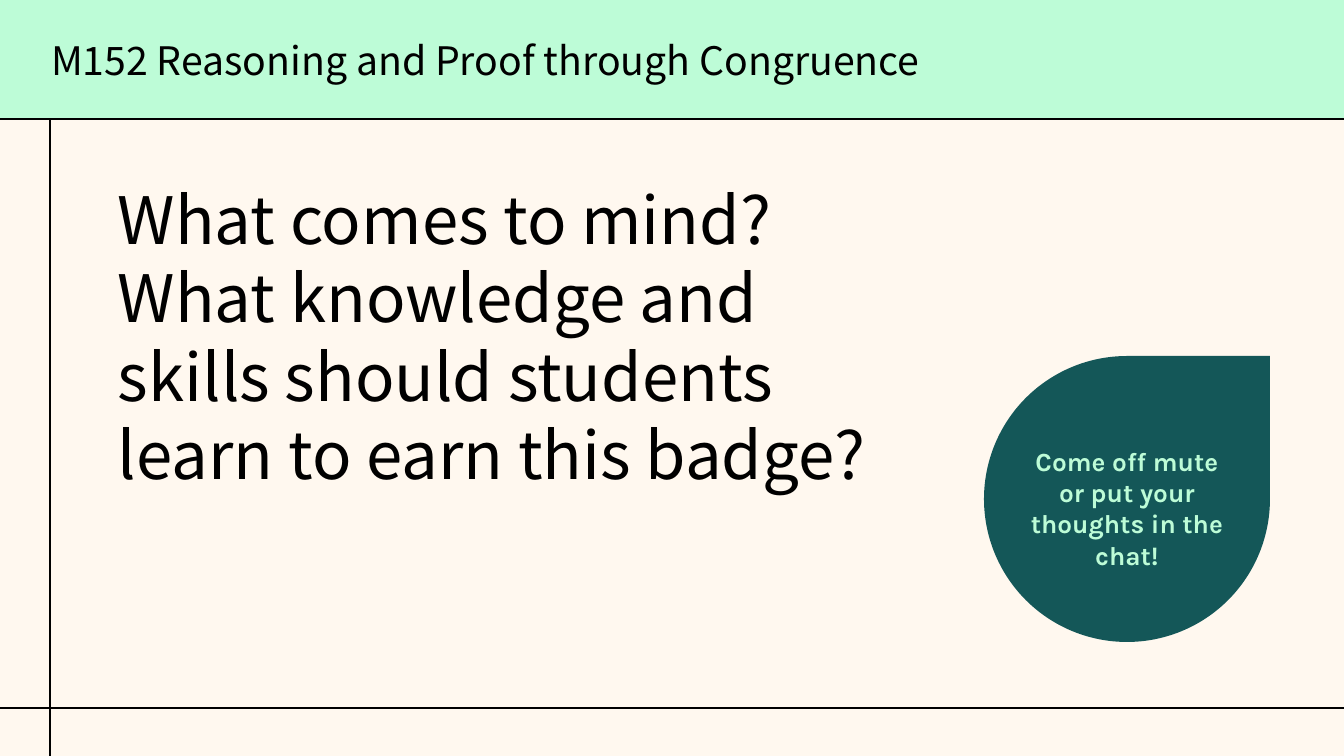
from lxml import etree
from pptx import Presentation
from pptx.dml.color import RGBColor
from pptx.enum.shapes import MSO_CONNECTOR, MSO_SHAPE
from pptx.enum.text import MSO_ANCHOR, MSO_AUTO_SIZE, PP_ALIGN
from pptx.oxml.ns import qn
from pptx.util import Emu, Pt

WIDTH, HEIGHT = 1344, 756
EMU_PER_PX = 9144000 / WIDTH

CREAM = RGBColor(0xFF, 0xF8, 0xEF)
MINT = RGBColor(0xBD, 0xFC, 0xD7)
TEAL = RGBColor(0x14, 0x57, 0x58)
BLACK = RGBColor(0, 0, 0)

BODY_FONT = "Noto Sans CJK KR"
ACCENT_FONT = "Karla"


def px(length):
    return Emu(round(length * EMU_PER_PX))


def add_rule(page, start, end):
    rule = page.shapes.add_connector(
        MSO_CONNECTOR.STRAIGHT, *map(px, start + end))
    rule.line.color.rgb = BLACK
    rule.line.width = Pt(0.75)
    etree.SubElement(rule.element.spPr, qn("a:effectLst"))


def add_block(page, kind, bounds, color):
    block = page.shapes.add_shape(kind, *map(px, bounds))
    block.shadow.inherit = False
    block.fill.solid()
    block.fill.fore_color.rgb = color
    block.line.fill.background()
    return block


def add_box(page, bounds):
    return page.shapes.add_textbox(*map(px, bounds))


def write(box, *lines, size, font=BODY_FONT, color=BLACK, bold=False,
          align=PP_ALIGN.LEFT, spacing=None, after=0):
    """Fill a box with one paragraph, breaking between the given lines."""
    frame = box.text_frame
    frame.word_wrap = True
    frame.auto_size = MSO_AUTO_SIZE.SHAPE_TO_FIT_TEXT
    frame.vertical_anchor = MSO_ANCHOR.TOP
    frame.margin_left = frame.margin_right = 0
    frame.margin_top = frame.margin_bottom = 0
    para = frame.paragraphs[0]
    para.alignment = align
    para.line_spacing = spacing
    para.space_before, para.space_after = Pt(0), Pt(after)
    for index, line in enumerate(lines):
        if index:
            para.add_line_break()
        span = para.add_run()
        span.text = line
        span.font.size = Pt(size)
        span.font.name = font
        span.font.bold = bold
        span.font.color.rgb = color


def place_title(page, banner, bounds):
    title = page.shapes.title
    title.left, title.top, title.width, title.height = map(px, bounds)
    banner.element.addnext(title.element)  # bring in front of the banner
    return title


def main():
    deck = Presentation()
    deck.slide_width, deck.slide_height = px(WIDTH), px(HEIGHT)
    page = deck.slides.add_slide(deck.slide_layouts[5])
    page.background.fill.solid()
    page.background.fill.fore_color.rgb = CREAM

    # Margin rule and title banner
    add_rule(page, (50, 0), (50, HEIGHT))
    banner = add_block(page, MSO_SHAPE.RECTANGLE, (0, 0, WIDTH, 119), MINT)
    title = place_title(page, banner, (51, 40, 887, 43))
    write(title, "M152 Reasoning and Proof through Congruence",
          size=21, spacing=Pt(23))
    add_rule(page, (WIDTH, 119), (0, 119))

    # Question
    question = add_box(page, (118, 179, 797, 317))
    write(question, "What comes to mind?",
          "What knowledge and skills should students learn to earn this badge?",
          size=35, spacing=Pt(42), after=12)

    # Prompt in the teardrop
    add_block(page, MSO_SHAPE.TEAR, (984, 356, 286, 286), TEAL)
    prompt = add_box(page, (1025, 445, 204, 126))
    write(prompt, "Come off mute or put your thoughts in the chat!",
          size=14, font=ACCENT_FONT, color=MINT, bold=True,
          align=PP_ALIGN.CENTER)

    # Footer rule
    add_rule(page, (WIDTH, 708), (0, 708))

    deck.save("out.pptx")


if __name__ == "__main__":
    main()
